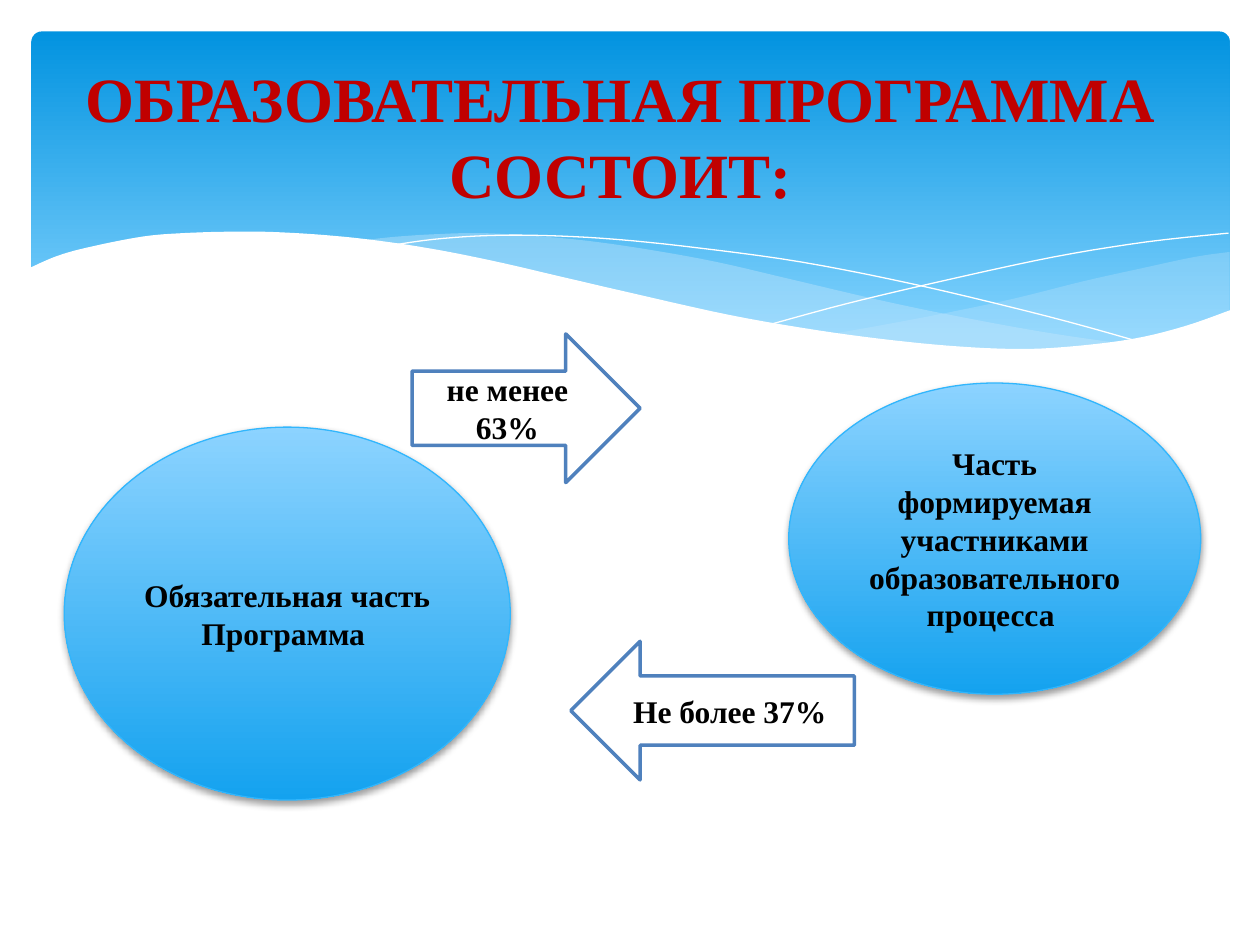
from dataclasses import dataclass

from lxml.etree import SubElement
from pptx import Presentation
from pptx.dml.color import RGBColor as RGB
from pptx.enum.shapes import MSO_SHAPE as Shape
from pptx.enum.text import MSO_ANCHOR as Anchor, MSO_AUTO_SIZE as AutoSize, PP_ALIGN as Align
from pptx.oxml.ns import qn
from pptx.util import Inches, Pt


@dataclass(frozen=True)
class Theme:
    """Colours, font and type sizes of the slide."""
    font: str = "Times New Roman"
    title_size: int = 36
    body_size: int = 18
    title: str = "C00000"
    text: str = "000000"
    white: str = "FFFFFF"
    wave: str = "C6E7FC"
    outline: str = "31B6FD"
    arrow: str = "4F81BD"
    banner: tuple = (("0293E0", 0), ("83D3FE", 0.9))
    oval: tuple = (("8CD3FF", 0), ("14A2EF", 1))


RIGHT_WAVE_TOP = [(97.6, 20), (94.8, 20.4), (90.6, 21.3), (86.1, 22.3),
                  (80.5, 23.7), (75.3, 24.8), (70.6, 25.7), (66.1, 26.5)]
RIGHT_WAVE_BASE = [(66.1, 26.5), (70.5, 27.1), (75.7, 27.6), (80.3, 27.8), (84.4, 27.7),
                   (88.1, 27.3), (92.1, 26.5), (94.9, 25.7), (97.6, 24.7)]
MIDDLE_WAVE_TOP = [(89.3, 27.3), (83.7, 26.5), (77.5, 25.4), (70.6, 24), (62.9, 22.2),
                   (56.9, 20.8), (51.4, 19.8), (46.5, 19.1), (42, 18.7), (38, 18.5),
                   (34.4, 18.6), (31.3, 18.8), (28.6, 19.1)]
MIDDLE_WAVE_BASE = [(28.6, 19.1), (34.2, 19.9), (40.4, 21.1), (44.9, 22.2), (53, 24),
                    (60.1, 25.5), (66.5, 26.6), (72.2, 27.4), (77.3, 27.7), (81.8, 27.8),
                    (85.7, 27.7), (89.3, 27.3)]
FALLING_LINE = [(30.9, 19.5), (34.4, 19), (38.7, 18.7), (43.3, 18.7), (48.9, 19),
                (55.6, 19.7), (63.6, 20.8), (72.7, 22.6), (83.1, 25.1), (90.7, 27.2)]
RISING_LINE = [(61.3, 25.7), (67.2, 24.1), (74.8, 22.3), (83.6, 20.4), (91, 19.2), (97.5, 18.5)]
WHITE_WAVE = [(97.7, 24.6), (94, 25.9), (89.9, 26.9), (85, 27.5), (80.9, 27.7), (76.1, 27.5),
              (70.8, 27), (64.8, 26.2), (57.9, 25), (50.3, 23.3), (44.7, 22), (39.1, 20.7),
              (34, 19.7), (29.2, 19), (25, 18.6), (21.1, 18.4), (17.7, 18.4), (14.6, 18.5),
              (11.9, 18.7), (9.5, 19.1), (7.6, 19.5), (5.9, 19.9), (4.6, 20.3), (3.6, 20.7),
              (2.3, 21.3)]


def smooth(points, steps=5):
    """Return a Catmull-Rom curve through the points."""
    padded = [points[0], *points, points[-1]]
    curve = [points[0]]
    for a, b, c, d in zip(padded, padded[1:], padded[2:], padded[3:]):
        for t in (i / steps for i in range(1, steps + 1)):
            curve.append(tuple(
                (2 * q + (r - p) * t + (2 * p - 5 * q + 4 * r - v) * t ** 2
                 + (3 * q - p - 3 * r + v) * t ** 3) / 2
                for p, q, r, v in zip(a, b, c, d)))
    return curve


def write(shape, text, font, size, color, bold=True, align=Align.CENTER):
    """Fill a shape with one formatted, vertically centred paragraph."""
    tf = shape.text_frame
    tf.word_wrap, tf.auto_size, tf.vertical_anchor = True, AutoSize.NONE, Anchor.MIDDLE
    p = tf.paragraphs[0]
    p.alignment = align
    r = p.add_run()
    r.text = text
    r.font.name, r.font.size, r.font.bold = font, Pt(size), bold
    r.font.color.rgb = RGB.from_string(color)


class Deck:
    """Draws on the current slide, on a grid of 100 columns by 75 rows."""

    def __init__(self, theme):
        """Open a presentation with the given theme."""
        self.theme = theme
        self.prs = Presentation()
        self.prs.slide_width, self.prs.slide_height = Inches(10), Inches(7.5)
        self.s = None

    def grid(self, *cells):
        """Convert grid cells to lengths."""
        return [round(c * self.prs.slide_width / 100) for c in cells]

    def add_slide(self):
        """Start a title-only slide."""
        self.s = self.prs.slides.add_slide(self.prs.slide_layouts[5])

    def title(self, text, *box):
        """Place the title in front of what is already drawn."""
        sp = self.s.shapes.title
        sp.left, sp.top, sp.width, sp.height = self.grid(*box)
        sp.element.getparent().append(sp.element)
        write(sp, text, self.theme.font, self.theme.title_size, self.theme.title)

    def paint(self, sp, fill=None, line=None, width=0, alpha=None):
        """Set fill, line and opacity; a tuple fill is a downward gradient."""
        sp.shadow.inherit = False
        if isinstance(fill, tuple):
            sp.fill.gradient()
            sp.fill.gradient_angle = 270
            for stop, (color, position) in zip(sp.fill.gradient_stops, fill):
                stop.color.rgb, stop.position = RGB.from_string(color), position
        elif fill:
            sp.fill.solid()
            sp.fill.fore_color.rgb = RGB.from_string(fill)
        else:
            sp.fill.background()
        if alpha:
            color = sp.element.spPr.find(".//" + qn("a:srgbClr"))
            SubElement(color, qn("a:alpha"), val=str(alpha * 1000))
        if line:
            sp.line.color.rgb, sp.line.width = RGB.from_string(line), Pt(width)
        else:
            sp.line.fill.background()

    def shape(self, kind, *box, text=None, **style):
        """Add a preset shape with optional text."""
        sp = self.s.shapes.add_shape(kind, *self.grid(*box))
        self.paint(sp, **style)
        if text:
            write(sp, text, self.theme.font, self.theme.body_size, self.theme.text)
        return sp

    def curve(self, points, closed=True, **style):
        """Add a free outline through grid points."""
        start, *rest = [self.grid(*point) for point in points]
        builder = self.s.shapes.build_freeform(*start)
        builder.add_line_segments(rest, close=closed)
        self.paint(builder.convert_to_shape(), **style)

    def banner(self):
        """Draw the blue banner with its waves."""
        t = self.theme
        sp = self.shape(Shape.ROUNDED_RECTANGLE, 2.5, 2.5, 95.1, 27, fill=t.banner)
        sp.adjustments[0] = 0.03
        self.curve(smooth(RIGHT_WAVE_TOP) + smooth(RIGHT_WAVE_BASE), fill=t.wave, alpha=29)
        self.curve(smooth(MIDDLE_WAVE_TOP) + smooth(MIDDLE_WAVE_BASE), fill=t.wave, alpha=40)
        for points in (FALLING_LINE, RISING_LINE):
            self.curve(smooth(points), closed=False, line=t.white)
        self.curve(smooth(WHITE_WAVE) + [(2.3, 32.9), (97.7, 32.9)], fill=t.white)

    def oval(self, text, *box):
        """Add a gradient oval with a soft shadow below."""
        t = self.theme
        sp = self.shape(Shape.OVAL, *box, text=text, fill=t.oval, line=t.outline, width=0.75)
        effects = sp.element.spPr.find(qn("a:effectLst"))
        shadow = SubElement(effects, qn("a:outerShdw"), blurRad=str(Pt(4)), dist=str(Pt(2)),
                            dir="5400000", rotWithShape="0")
        color = SubElement(shadow, qn("a:srgbClr"), val=t.text)
        SubElement(color, qn("a:alpha"), val="38000")

    def arrow(self, kind, text, *box):
        """Add an outlined block arrow."""
        self.shape(kind, *box, text=text, fill=self.theme.white, line=self.theme.arrow, width=2)


def main():
    """Build and save the slide."""
    deck = Deck(Theme())
    deck.add_slide()
    deck.banner()
    deck.title("ОБРАЗОВАТЕЛЬНАЯ ПРОГРАММА СОСТОИТ:", 1.2, 3.7, 96.1, 14.1)
    deck.oval("Обязательная часть Программа ", 5.1, 33.9, 35.4, 29.6)
    deck.oval("Часть формируемая участниками образовательного процесса ", 62.6, 30.4, 32.7, 24.7)
    deck.arrow(Shape.RIGHT_ARROW, "не менее 63%", 32.7, 26.5, 18.1, 11.8)
    deck.arrow(Shape.LEFT_ARROW, "Не более 37%", 45.3, 50.9, 22.5, 11)
    deck.prs.save("out.pptx")


if __name__ == "__main__":
    main()
